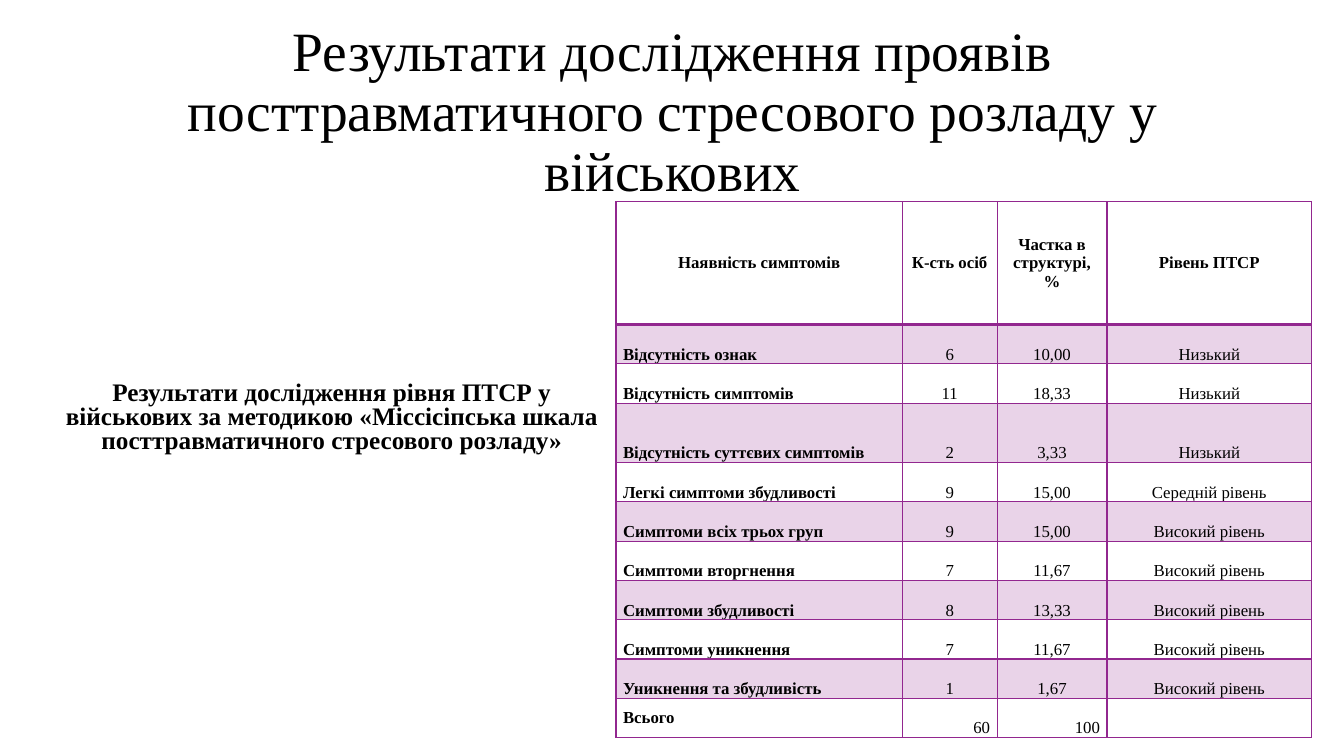
"""Builds a slide with a heading, a caption and a table of PTSD survey results."""
from dataclasses import dataclass

from lxml import etree
from pptx import Presentation
from pptx import util as u
from pptx.dml.color import RGBColor
from pptx.enum import text
from pptx.oxml import ns

ALIGN = text.PP_ALIGN
ANCHOR = text.MSO_ANCHOR


@dataclass(frozen=True)
class Theme:
    """Fonts, colours and type sizes."""
    font: str = "Times New Roman"
    ink: str = "000000"
    accent: str = "92278F"
    band_alpha: int = 20
    title: float = 39.6
    caption: float = 18
    cell: float = 12
    rule: float = 1
    header_rule: float = 2


class Deck:
    """Holds the theme and the current slide."""

    def __init__(self, theme):
        """Start a widescreen presentation with one slide."""
        self.theme = theme
        self.prs = Presentation()
        self.prs.slide_width = u.Inches(13.33)
        self.prs.slide_height = u.Inches(7.5)
        self.s = self.prs.slides.add_slide(self.prs.slide_layouts[1])

    def paragraph(self, tf, words, size, align, bold=False):
        """Set one formatted paragraph and return it."""
        p = tf.paragraphs[0]
        p.text = words
        p.alignment = align
        for r in p.runs:
            r.font.name = self.theme.font
            r.font.size = u.Pt(size)
            r.font.bold = bold
            r.font.color.rgb = RGBColor.from_string(self.theme.ink)
        return p

    def placeholder(self, idx, box, words, size, spacing, anchor, bold=False):
        """Move and fill a template placeholder."""
        sp = self.s.placeholders[idx]
        sp.left, sp.top, sp.width, sp.height = map(u.Inches, box)
        tf = sp.text_frame
        tf.word_wrap = True
        tf.auto_size = text.MSO_AUTO_SIZE.NONE
        tf.vertical_anchor = anchor
        p = self.paragraph(tf, words, size, ALIGN.CENTER, bold)
        p.line_spacing = spacing
        p.space_before = u.Pt(0)
        return p

    def title(self, box, words):
        """Fill the title placeholder."""
        self.placeholder(0, box, words, self.theme.title, 0.9, ANCHOR.MIDDLE)

    def caption(self, box, words):
        """Fill the body placeholder as a caption without a bullet."""
        p = self.placeholder(1, box, words, self.theme.caption, 0.8, ANCHOR.TOP, True)
        pPr = p._p.get_or_add_pPr()
        pPr.set("marL", "0")
        pPr.set("indent", "0")
        etree.SubElement(pPr, ns.qn("a:buNone"))

    def borders(self, cell, widths):
        """Draw the left, right, top and bottom rules of a cell."""
        tcPr = cell._tc.get_or_add_tcPr()
        for i, (side, width) in enumerate(zip("LRTB", widths)):
            ln = etree.Element(ns.qn(f"a:ln{side}"), w=str(u.Pt(width)))
            fill = etree.SubElement(ln, ns.qn("a:solidFill"))
            etree.SubElement(fill, ns.qn("a:srgbClr"), val=self.theme.accent)
            tcPr.insert(i, ln)

    def band(self, cell):
        """Tint a cell with the translucent accent colour."""
        cell.fill.solid()
        cell.fill.fore_color.rgb = RGBColor.from_string(self.theme.accent)
        clr = cell._tc.tcPr.find(".//" + ns.qn("a:srgbClr"))
        etree.SubElement(clr, ns.qn("a:alpha"), val=str(self.theme.band_alpha * 1000))

    def table(self, left, top, widths, heights, rows):
        """Add a table with a header, tinted odd rows and a total row."""
        t = self.theme
        size = (u.Inches(sum(widths)), u.Inches(sum(heights)))
        tbl = self.s.shapes.add_table(len(rows), len(widths), u.Inches(left), u.Inches(top), *size).table
        tbl.first_row = tbl.horz_banding = False
        for col, width in zip(tbl.columns, widths):
            col.width = u.Inches(width)
        for row, height in zip(tbl.rows, heights):
            row.height = u.Inches(height)
        last = len(rows) - 1
        for i, row in enumerate(rows):
            for j, words in enumerate(row):
                cell = tbl.cell(i, j)
                cell.margin_left = cell.margin_right = u.Inches(0.07)
                cell.margin_top = cell.margin_bottom = 0
                middle = i == 0 or (i == last and j == 0)
                cell.vertical_anchor = ANCHOR.MIDDLE if middle else ANCHOR.BOTTOM
                if i and j == 0:
                    align = ALIGN.LEFT
                else:
                    align = ALIGN.RIGHT if i == last else ALIGN.CENTER
                self.paragraph(cell.text_frame, words, t.cell, align, i == 0 or j == 0)
                if i % 2 and i < last:
                    self.band(cell)
                else:
                    cell.fill.background()
                above = t.header_rule if i == 1 else t.rule
                below = t.header_rule if i == 0 else t.rule
                self.borders(cell, (t.rule, t.rule, above, below))


RESULTS = [
    ("Наявність симптомів", "К-сть осіб", "Частка в структурі, %", "Рівень ПТСР"),
    ("Відсутність ознак", "6", "10,00", "Низький"),
    ("Відсутність симптомів", "11", "18,33", "Низький"),
    ("Відсутність суттєвих симптомів", "2", "3,33", "Низький"),
    ("Легкі симптоми збудливості", "9", "15,00", "Середній рівень"),
    ("Симптоми всіх трьох груп", "9", "15,00", "Високий рівень"),
    ("Симптоми вторгнення", "7", "11,67", "Високий рівень"),
    ("Симптоми збудливості", "8", "13,33", "Високий рівень"),
    ("Симптоми уникнення", "7", "11,67", "Високий рівень"),
    ("Уникнення та збудливість", "1", "1,67", "Високий рівень"),
    ("Всього", "60", "100", ""),
]


def main():
    """Build and save the slide."""
    deck = Deck(Theme())
    deck.title((0.92, 0.4, 11.5, 1.45),
               "Результати дослідження проявів посттравматичного стресового розладу у військових")
    deck.caption((0.47, 3.74, 5.64, 0.9),
                 "Результати дослідження рівня ПТСР у військових за методикою "
                 "«Міссісіпська шкала посттравматичного стресового розладу»")
    heights = [1.22, 0.39, 0.39, 0.59] + [0.39] * 7
    deck.table(6.11, 2, (2.84, 0.94, 1.09, 2.03), heights, RESULTS)
    deck.prs.save("out.pptx")


if __name__ == "__main__":
    main()
